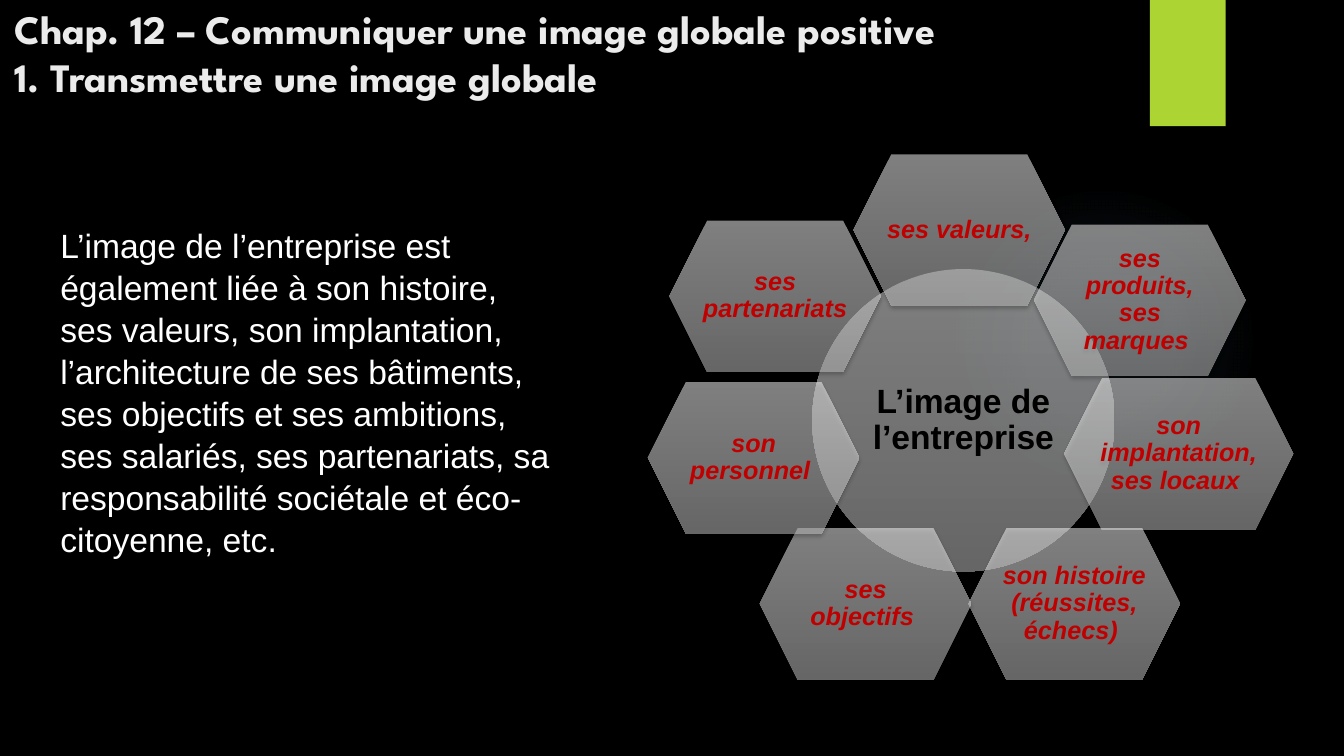
import pptx
import pptx.dml.color
import pptx.enum.shapes
import pptx.enum.text
import pptx.oxml
import pptx.oxml.ns
import pptx.util

Cm = pptx.util.Cm
Pt = pptx.util.Pt
RGBColor = pptx.dml.color.RGBColor
Shape = pptx.enum.shapes.MSO_SHAPE
Align = pptx.enum.text.PP_ALIGN
Anchor = pptx.enum.text.MSO_ANCHOR

BLACK = RGBColor(0x00, 0x00, 0x00)
WHITE = RGBColor(0xFF, 0xFF, 0xFF)
SILVER = RGBColor(0xCD, 0xCD, 0xCD)
PALE = RGBColor(0xEB, 0xEB, 0xEB)
LIME = RGBColor(0xAC, 0xD4, 0x33)
SKY = RGBColor(0x7A, 0xC4, 0xF0)
RED = RGBColor(0xC0, 0x00, 0x00)

DOWNWARD = '<a:lin ang="5400000" scaled="0"/>'
RADIAL = ('<a:path path="circle"><a:fillToRect l="50000" t="50000" '
          'r="50000" b="50000"/></a:path>')
GLASS = ((0, WHITE, 50), (100, SILVER, 50))
GLOW = ((0, SKY, 7), (36, SKY, 6), (69, SKY, 0))

PETAL_WIDTH, PETAL_HEIGHT = 5.33, 3.81
PETALS = (
    ("ses valeurs, ", 21.51, 3.89, PETAL_WIDTH),
    ("ses produits, ses marques ", 26.06, 5.66, PETAL_WIDTH),
    ("son implantation, ses locaux ", 26.82, 9.53, 5.77),
    ("son histoire (réussites, échecs) ", 24.41, 13.31, PETAL_WIDTH),
    ("ses objectifs ", 19.15, 13.31, PETAL_WIDTH),
    ("son personnel ", 16.33, 9.63, PETAL_WIDTH),
    ("ses partenariats", 16.87, 5.56, PETAL_WIDTH),
)


class SlideBuilder:
    """Draws styled elements on one slide."""

    title_font = "League Spartan"
    body_font = "Arial"

    def __init__(self, slide):
        self.slide = slide
        slide.background.fill.solid()
        slide.background.fill.fore_color.rgb = BLACK

    def style(self, paragraph, name, size, color, bold=False, italic=False):
        font = paragraph.font
        font.name, font.size = name, Pt(size)
        font.bold, font.italic = bold, italic
        font.color.rgb = color

    def title(self, lines, left, top, width, height):
        title = self.slide.shapes.title
        title.left, title.top = Cm(left), Cm(top)
        title.width, title.height = Cm(width), Cm(height)
        frame = title.text_frame
        frame.vertical_anchor = Anchor.BOTTOM
        frame.auto_size = pptx.enum.text.MSO_AUTO_SIZE.NONE
        paragraph = frame.paragraphs[0]
        paragraph.text = "\n".join(lines)
        paragraph.alignment = Align.LEFT
        self.style(paragraph, self.title_font, 28.8, PALE, bold=True)

    def text(self, text, left, top, width, height):
        box = self.slide.shapes.add_textbox(Cm(left), Cm(top), Cm(width), Cm(height))
        box.text_frame.word_wrap = True
        paragraph = box.text_frame.paragraphs[0]
        paragraph.text = text
        paragraph.line_spacing = 1.04
        self.style(paragraph, self.body_font, 24, WHITE)

    def shape(self, kind, left, top, width, height, shadow=True):
        shape = self.slide.shapes.add_shape(kind, Cm(left), Cm(top), Cm(width), Cm(height))
        shape.line.fill.background()
        shape.shadow.inherit = False
        if shadow:
            effects = shape._element.spPr.find(pptx.oxml.ns.qn("a:effectLst"))
            effects.append(pptx.oxml.parse_xml(
                f'<a:outerShdw {pptx.oxml.ns.nsdecls("a")} blurRad="{Pt(3)}" '
                f'dist="{Pt(2)}" dir="5400000" rotWithShape="0">'
                f'<a:srgbClr val="{BLACK}"><a:alpha val="45000"/></a:srgbClr></a:outerShdw>'))
        return shape

    def solid(self, shape, color):
        shape.fill.solid()
        shape.fill.fore_color.rgb = color

    def gradient(self, shape, stops, direction):
        shape.fill.background()
        properties = shape._element.spPr
        stop_list = "".join(
            f'<a:gs pos="{position * 1000}"><a:srgbClr val="{color}">'
            f'<a:alpha val="{opacity * 1000}"/></a:srgbClr></a:gs>'
            for position, color, opacity in stops)
        properties.replace(
            properties.find(pptx.oxml.ns.qn("a:noFill")),
            pptx.oxml.parse_xml(
                f'<a:gradFill {pptx.oxml.ns.nsdecls("a")} rotWithShape="1">'
                f'<a:gsLst>{stop_list}</a:gsLst>{direction}</a:gradFill>'))

    def label(self, shape, text, size, color, italic=False):
        frame = shape.text_frame
        frame.word_wrap = True
        frame.vertical_anchor = Anchor.MIDDLE
        frame.margin_left = frame.margin_right = Cm(0.08)
        frame.margin_top = frame.margin_bottom = Cm(0.08)
        paragraph = frame.paragraphs[0]
        paragraph.text = text
        paragraph.alignment = Align.CENTER
        paragraph.line_spacing = 0.9
        self.style(paragraph, self.body_font, size, color, bold=True, italic=italic)

    def glass(self, kind, text, box, size, color, italic=False):
        shape = self.shape(kind, *box)
        self.gradient(shape, GLASS, DOWNWARD)
        self.label(shape, text, size, color, italic)


def main():
    presentation = pptx.Presentation()
    presentation.slide_width, presentation.slide_height = Cm(33.87), Cm(19.05)
    slide = presentation.slides.add_slide(presentation.slide_layouts[5])
    builder = SlideBuilder(slide)

    glow = builder.shape(Shape.OVAL, 23.9, 4.65, 7.82, 7.82, shadow=False)
    builder.gradient(glow, GLOW, RADIAL)
    builder.solid(builder.shape(Shape.RECTANGLE, 28.98, 0, 1.91, 3.18), LIME)

    builder.title(("Chap. 12 – Communiquer une image globale positive",
                   "1. Transmettre une image globale"), 0.1, 0.79, 32.89, 1.88)
    builder.text("L’image de l’entreprise est également liée à son histoire, "
                 "ses valeurs, son implantation, l’architecture de ses bâtiments, "
                 "ses objectifs et ses ambitions, ses salariés, ses partenariats, "
                 "sa responsabilité sociétale et éco-citoyenne, etc.",
                 1.27, 5.51, 12.85, 8.46)

    builder.glass(Shape.OVAL, "L’image de l’entreprise", (20.47, 6.78, 7.62, 7.62), 24, BLACK)
    for text, left, top, width in PETALS:
        builder.glass(Shape.HEXAGON, text, (left, top, width, PETAL_HEIGHT), 18, RED, italic=True)

    presentation.save("out.pptx")


if __name__ == "__main__":
    main()
